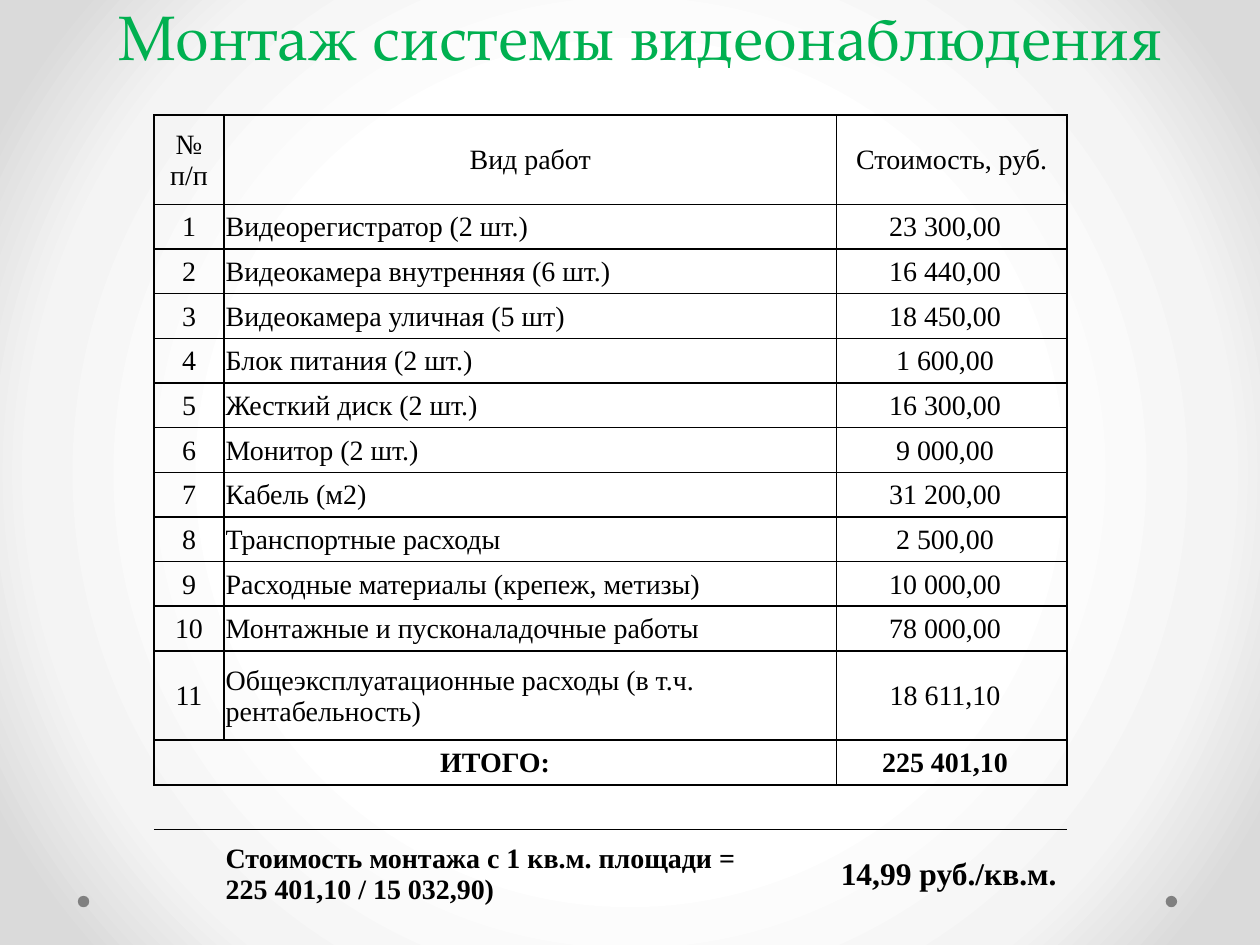
from lxml import etree
from pptx import Presentation
from pptx.dml.color import RGBColor
from pptx.enum.shapes import MSO_SHAPE
from pptx.enum.text import MSO_ANCHOR, PP_ALIGN
from pptx.oxml import parse_xml
from pptx.oxml.ns import qn
from pptx.util import Cm, Pt

OVAL = MSO_SHAPE.OVAL
MIDDLE = MSO_ANCHOR.MIDDLE
LEFT, CENTER = PP_ALIGN.LEFT, PP_ALIGN.CENTER
GREEN = RGBColor(0x00, 0xB0, 0x50)
BLACK = RGBColor(0, 0, 0)
GRAY = RGBColor(0x80, 0x80, 0x80)
STOPS = [
    (50, RGBColor(0xFF, 0xFF, 0xFF)),
    (76, RGBColor(0xF4, 0xF4, 0xF4)),
    (92, RGBColor(0xDA, 0xDA, 0xDA)),
]
SERIF = "Times New Roman"
TITLE = "TeX Gyre Pagella"
PLAIN = "{2D5ABB26-0587-4C30-8999-92F81FD0307C}"  # no style, no grid
NS = ('xmlns:a="http://schemas.openxmlformats.org/drawingml/2006/main" '
      'xmlns:p="http://schemas.openxmlformats.org/presentationml/2006/main"')

HEAD = ["№ п/п", "Вид работ", "Стоимость, руб."]
WORKS = [
    ("Видеорегистратор (2 шт.)", "23 300,00"),
    ("Видеокамера внутренняя (6 шт.)", "16 440,00"),
    ("Видеокамера уличная (5 шт)", "18 450,00"),
    ("Блок питания (2 шт.)", "1 600,00"),
    ("Жесткий диск (2 шт.)", "16 300,00"),
    ("Монитор (2 шт.)", "9 000,00"),
    ("Кабель (м2)", "31 200,00"),
    ("Транспортные расходы", "2 500,00"),
    ("Расходные материалы (крепеж, метизы)", "10 000,00"),
    ("Монтажные и пусконаладочные работы", "78 000,00"),
    ("Общеэксплуатационные расходы (в т.ч. рентабельность)", "18 611,10"),
]
NOTE = ["Стоимость монтажа с 1 кв.м. площади =", "225 401,10 / 15 032,90)"]
LOW, HIGH = 0.9, 1.8  # row heights, cm
PAD = 0.03            # cell inset, cm
SHIFT = 0.3           # right inset that moves the sums left, cm


def add_back(slide):
    stops = "".join(f'<a:gs pos="{pos * 1000}"><a:srgbClr val="{color}"/></a:gs>'
                    for pos, color in STOPS)
    back = parse_xml(
        f'<p:bg {NS}><p:bgPr><a:gradFill rotWithShape="1"><a:gsLst>{stops}</a:gsLst>'
        '<a:path path="circle"><a:fillToRect l="50000" t="50000" r="50000" b="50000"/>'
        '</a:path></a:gradFill><a:effectLst/></p:bgPr></p:bg>')
    slide.element.cSld.insert(0, back)


def add_dot(slide, left):
    dot = slide.shapes.add_shape(OVAL, Cm(left), Cm(18.06), Cm(0.23), Cm(0.23))
    dot.shadow.inherit = False
    dot.fill.solid()
    dot.fill.fore_color.rgb = GRAY
    dot.line.fill.background()


def add_grid(slide, left, top, cols, rows):
    frame = slide.shapes.add_table(len(rows), len(cols), Cm(left), Cm(top),
                                   Cm(sum(cols)), Cm(sum(rows)))
    grid = frame.table
    grid.first_row = grid.horz_banding = False
    frame.element.find(".//" + qn("a:tableStyleId")).text = PLAIN
    for col, width in zip(grid.columns, cols):
        col.width = Cm(width)
    for row, height in zip(grid.rows, rows):
        row.height = Cm(height)
    for cell in grid.iter_cells():
        cell.vertical_anchor = MIDDLE
        cell.margin_left = cell.margin_right = cell.margin_top = Cm(PAD)
        cell.margin_bottom = 0
    return grid


def add_edges(cell, sides):
    props = cell._tc.get_or_add_tcPr()
    for side in sides:
        line = etree.SubElement(props, qn("a:ln" + side), w=str(Pt(1)))
        fill = etree.SubElement(line, qn("a:solidFill"))
        etree.SubElement(fill, qn("a:srgbClr"), val=str(BLACK))


def write(cell, lines, align=CENTER, size=16, bold=False, name=SERIF, color=BLACK):
    frame = cell.text_frame
    for i, line in enumerate(lines):
        para = frame.add_paragraph() if i else frame.paragraphs[0]
        para.alignment = align
        run = para.add_run()
        run.text = line
        font = run.font
        font.size, font.bold, font.name = Pt(size), bold, name
        font.color.rgb = color


def add_title(slide):
    grid = add_grid(slide, 0.36, 0.3, [25.1], [0.66, 0.66])
    cell = grid.cell(0, 0)
    cell.margin_left = cell.margin_right = Cm(0.18)
    cell.margin_top = 0
    write(cell, ["Монтаж системы видеонаблюдения"], size=36, name=TITLE, color=GREEN)
    for cell in grid.iter_cells():
        cell.fill.background()


def add_costs(slide):
    count = len(WORKS)
    total, gap, last = count + 1, count + 2, count + 3
    rows = [HIGH] + [LOW] * (count - 1) + [HIGH, LOW, LOW, HIGH]
    grid = add_grid(slide, 3.1, 2.32, [1.42, 12.34, 4.65], rows)

    # Borders: full grid down to the total, open below it
    for i in range(len(rows)):
        sides = "LRTB" if i <= total else "T" if i == gap else ""
        for j in range(3):
            cell = grid.cell(i, j)
            add_edges(cell, sides)
            cell.fill.background()

    # Header and works
    for j, text in enumerate(HEAD):
        write(grid.cell(0, j), [text])
    for i, (work, cost) in enumerate(WORKS, 1):
        write(grid.cell(i, 0), [str(i)])
        write(grid.cell(i, 1), [work], align=LEFT)
        write(grid.cell(i, 2), [cost])

    # Total and price per square metre
    grid.cell(total, 0).merge(grid.cell(total, 1))
    write(grid.cell(total, 0), ["ИТОГО:"], bold=True)
    write(grid.cell(total, 2), ["225 401,10"], bold=True)
    write(grid.cell(last, 1), NOTE, align=LEFT, bold=True)
    write(grid.cell(last, 2), ["14,99 руб./кв.м."], size=18, bold=True)
    for i in range(1, total + 1):
        grid.cell(i, 2).margin_right = Cm(SHIFT)
    grid.cell(last, 2).margin_right = Cm(SHIFT / 2)


def main():
    deck = Presentation()
    deck.slide_width, deck.slide_height = Cm(25.4), Cm(19.05)
    slide = deck.slides.add_slide(deck.slide_layouts[6])
    add_back(slide)
    for left in (23.5, 1.57):
        add_dot(slide, left)
    add_title(slide)
    add_costs(slide)
    deck.save("out.pptx")


if __name__ == "__main__":
    main()
